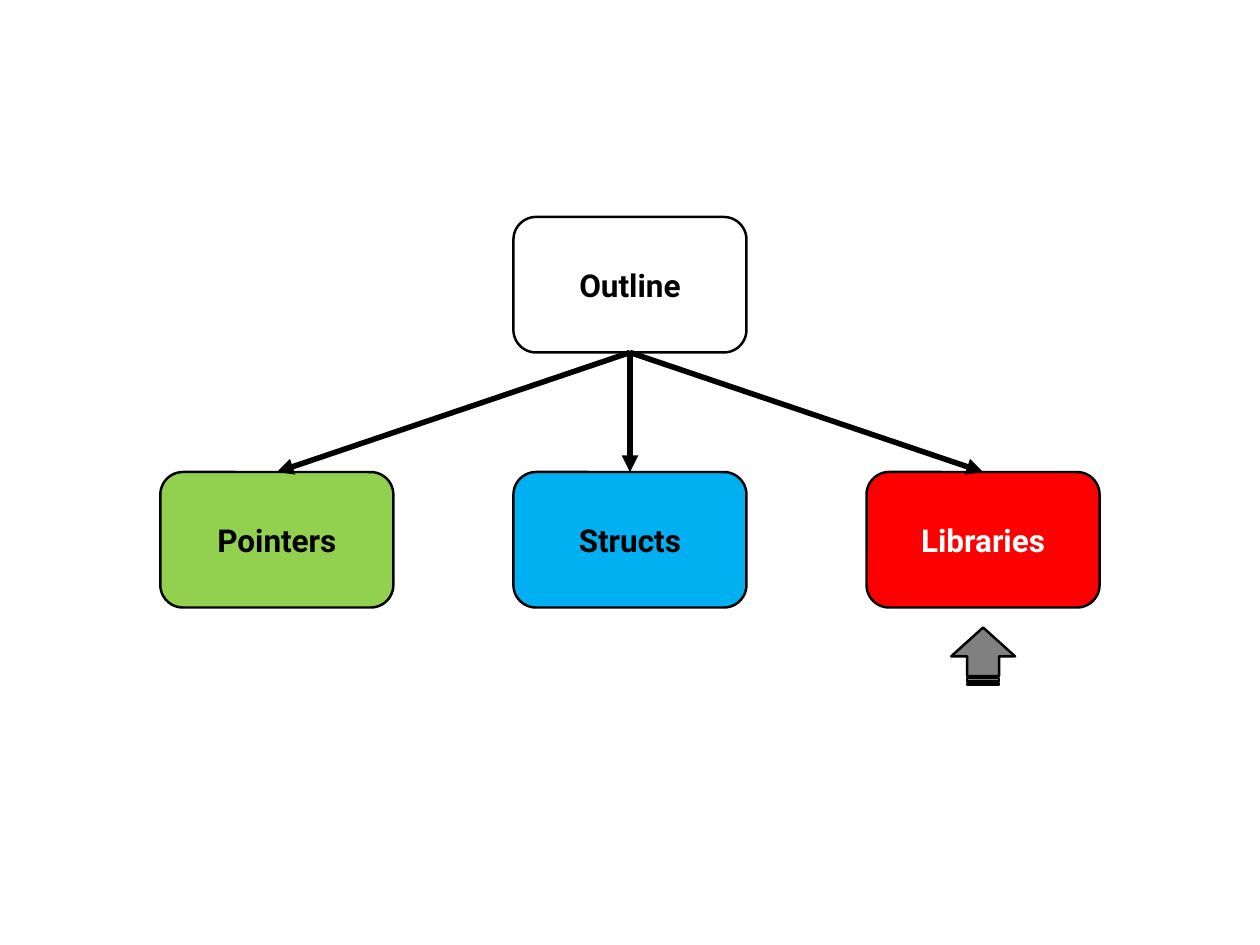
from lxml import etree
from pptx import Presentation
from pptx.dml.color import RGBColor
from pptx.enum.shapes import MSO_CONNECTOR, MSO_SHAPE
from pptx.enum.text import MSO_ANCHOR, PP_ALIGN
from pptx.oxml.ns import qn
from pptx.util import Inches, Pt

ROUNDED = MSO_SHAPE.ROUNDED_RECTANGLE
STRIPED_ARROW = MSO_SHAPE.STRIPED_RIGHT_ARROW
STRAIGHT = MSO_CONNECTOR.STRAIGHT
MIDDLE = MSO_ANCHOR.MIDDLE
CENTER = PP_ALIGN.CENTER
TOP_SIDE, BOTTOM_SIDE = 0, 2

FONT = "Roboto"
BLACK, WHITE, GRAY = "000000", "FFFFFF", "808080"
BOX_WIDTH, BOX_HEIGHT = 2.63, 1.53
MARKER_LENGTH, MARKER_THICKNESS, MARKER_GAP = 0.65, 0.72, 0.22

# Topic, fill colour, text colour
TOPICS = [
    ("Pointers", "92D050", BLACK),
    ("Structs", "00B0F0", BLACK),
    ("Libraries", "FF0000", WHITE),
]
CURRENT_TOPIC = 2


def color(hex_value):
    return RGBColor.from_string(hex_value)


def add_outlined_shape(slide, kind, left, top, width, height, fill):
    shape = slide.shapes.add_shape(
        kind, Inches(left), Inches(top), Inches(width), Inches(height))
    shape.shadow.inherit = False
    shape.fill.solid()
    shape.fill.fore_color.rgb = color(fill)
    shape.line.color.rgb = color(BLACK)
    shape.line.width = Pt(2)
    return shape


def add_topic_box(slide, left, top, text, fill, text_color):
    box = add_outlined_shape(
        slide, ROUNDED, left, top, BOX_WIDTH, BOX_HEIGHT, fill)
    box.text_frame.vertical_anchor = MIDDLE
    paragraph = box.text_frame.paragraphs[0]
    paragraph.alignment = CENTER
    run = paragraph.add_run()
    run.text = text
    run.font.name = FONT
    run.font.size = Pt(25.6)
    run.font.bold = True
    run.font.color.rgb = color(text_color)
    return box


def add_branch(slide, parent, child):
    branch = slide.shapes.add_connector(STRAIGHT, 0, 0, 0, 0)
    branch.begin_connect(parent, BOTTOM_SIDE)
    branch.end_connect(child, TOP_SIDE)
    branch.line.color.rgb = color(BLACK)
    branch.line.width = Pt(4.5)
    # Arrowhead at the child, and no shadow
    line = branch.line._get_or_add_ln()
    etree.SubElement(line, qn("a:tailEnd"), type="triangle")
    etree.SubElement(branch._element.spPr, qn("a:effectLst"))


def add_marker(slide, center_x, top):
    # The frame is given before its quarter turn
    marker = add_outlined_shape(
        slide, STRIPED_ARROW, center_x - MARKER_LENGTH / 2, top,
        MARKER_LENGTH, MARKER_THICKNESS, GRAY)
    marker.rotation = 270


def add_topic_tree(slide, left, top, width, height):
    # Root above the middle of the row
    root = add_topic_box(
        slide, left + (width - BOX_WIDTH) / 2, top, "Outline", WHITE, BLACK)

    # Evenly spaced topics along the bottom
    step = (width - BOX_WIDTH) / (len(TOPICS) - 1)
    row_top = top + height - BOX_HEIGHT
    for index, (text, fill, text_color) in enumerate(TOPICS):
        box_left = left + index * step
        box = add_topic_box(slide, box_left, row_top, text, fill, text_color)
        add_branch(slide, root, box)
        if index == CURRENT_TOPIC:
            add_marker(slide, box_left + BOX_WIDTH / 2,
                       top + height + MARKER_GAP - 0.03)


def main():
    presentation = Presentation()
    presentation.slide_width = Inches(14.22)
    presentation.slide_height = Inches(10.67)
    blank_layout = presentation.slide_layouts[6]
    slide = presentation.slides.add_slide(blank_layout)
    add_topic_tree(slide, left=1.81, top=2.45, width=10.6, height=4.41)
    presentation.save("out.pptx")


if __name__ == "__main__":
    main()
